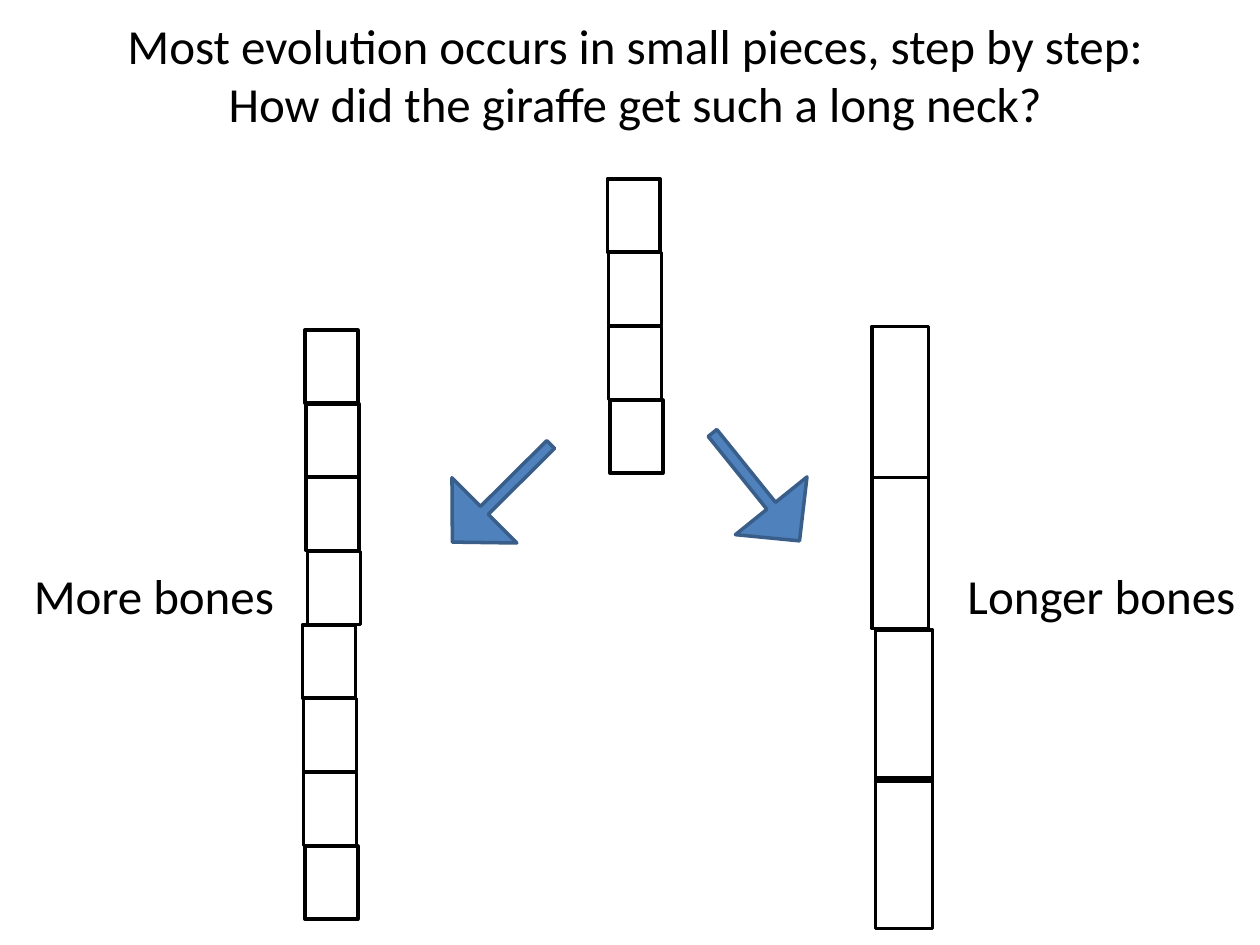
from dataclasses import dataclass

import pptx
import pptx.dml.color
import pptx.enum.shapes
import pptx.enum.text
import pptx.util

Inches = pptx.util.Inches
Pt = pptx.util.Pt
MSO_SHAPE = pptx.enum.shapes.MSO_SHAPE

COLORS = {"ink": "000000", "arrow": "4F81BD", "arrow_edge": "395E89"}
FONT = "Calibri"


@dataclass
class Stack:
    left: float
    top: float
    width: float
    height: float
    pitch: float
    shifts: tuple[float, ...]


@dataclass
class Arrow:
    left: float
    top: float
    rotation: float


@dataclass
class Label:
    left: float
    text: str


SHORT_SHIFTS = (0, 0.01, 0.01, 0.02)
NECKS = [
    [
        Stack(2.42, 2.62, 0.42, 0.58, 0.585, SHORT_SHIFTS),
        Stack(2.4, 4.96, 0.42, 0.58, 0.585, SHORT_SHIFTS),
    ],
    [Stack(4.82, 1.42, 0.42, 0.58, 0.585, SHORT_SHIFTS)],
    [
        Stack(6.92, 2.59, 0.45, 1.2, 1.2, (0, 0)),
        Stack(6.95, 5, 0.45, 1.2, 1.17, (0, 0)),
    ],
]
ARROWS = [Arrow(3.43, 3.55, 135.2), Arrow(5.45, 3.5, 51.1)]
LABELS = [Label(0.17, "More bones"), Label(7.58, "Longer bones")]


def rgb(name: str) -> pptx.dml.color.RGBColor:
    return pptx.dml.color.RGBColor.from_string(COLORS[name])


def format_text(tf, align) -> None:
    tf.word_wrap = True
    tf.auto_size = pptx.enum.text.MSO_AUTO_SIZE.NONE
    tf.vertical_anchor = pptx.enum.text.MSO_ANCHOR.TOP
    for p in tf.paragraphs:
        p.alignment = align
        for r in p.runs:
            r.font.name = FONT
            r.font.size = Pt(28)
            r.font.color.rgb = rgb("ink")


def add_title(s) -> None:
    sp = s.shapes.title
    sp.left, sp.top = Inches(0.58), Inches(0.07)
    sp.width, sp.height = Inches(8.92), Inches(1.04)
    sp.text_frame.text = (
        "Most evolution occurs in small pieces, step by step:\v"
        "How did the giraffe get such a long neck?"
    )
    format_text(sp.text_frame, pptx.enum.text.PP_ALIGN.CENTER)


def add_arrow(s, arrow: Arrow) -> None:
    sp = s.shapes.add_shape(
        MSO_SHAPE.RIGHT_ARROW,
        Inches(arrow.left), Inches(arrow.top), Inches(1.1), Inches(0.73),
    )
    sp.adjustments[0], sp.adjustments[1] = 0.12, 0.49
    sp.rotation = arrow.rotation
    sp.shadow.inherit = False
    sp.fill.solid()
    sp.fill.fore_color.rgb = rgb("arrow")
    sp.line.color.rgb = rgb("arrow_edge")
    sp.line.width = Pt(2)


def add_neck(s, stacks: list[Stack]) -> None:
    group = s.shapes.add_group_shape()
    for stack in stacks:
        for i, shift in enumerate(stack.shifts):
            sp = group.shapes.add_shape(
                MSO_SHAPE.RECTANGLE,
                Inches(stack.left + shift), Inches(stack.top + i * stack.pitch),
                Inches(stack.width), Inches(stack.height),
            )
            sp.shadow.inherit = False
            sp.fill.background()
            sp.line.color.rgb = rgb("ink")
            sp.line.width = Pt(2)


def add_label(s, label: Label) -> None:
    sp = s.shapes.add_textbox(
        Inches(label.left), Inches(4.44), Inches(3.42), Inches(0.57)
    )
    sp.text_frame.text = label.text
    format_text(sp.text_frame, pptx.enum.text.PP_ALIGN.LEFT)


def main() -> None:
    """Build the slide on the two ways a neck can grow longer."""
    prs = pptx.Presentation()
    prs.slide_width, prs.slide_height = Inches(10), Inches(7.5)
    s = prs.slides.add_slide(prs.slide_layouts[5])
    add_title(s)
    for arrow in ARROWS:
        add_arrow(s, arrow)
    for stacks in NECKS:
        add_neck(s, stacks)
    for label in LABELS:
        add_label(s, label)
    prs.save("out.pptx")


if __name__ == "__main__":
    main()
